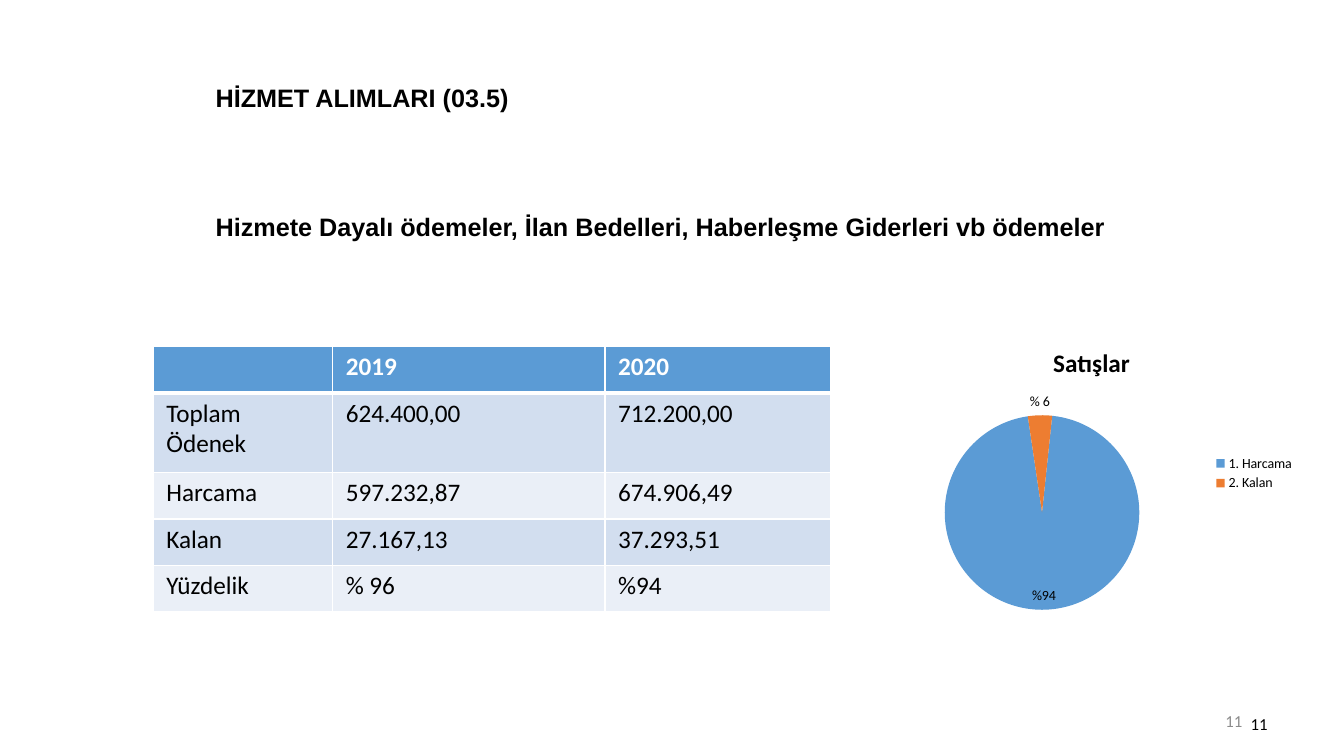
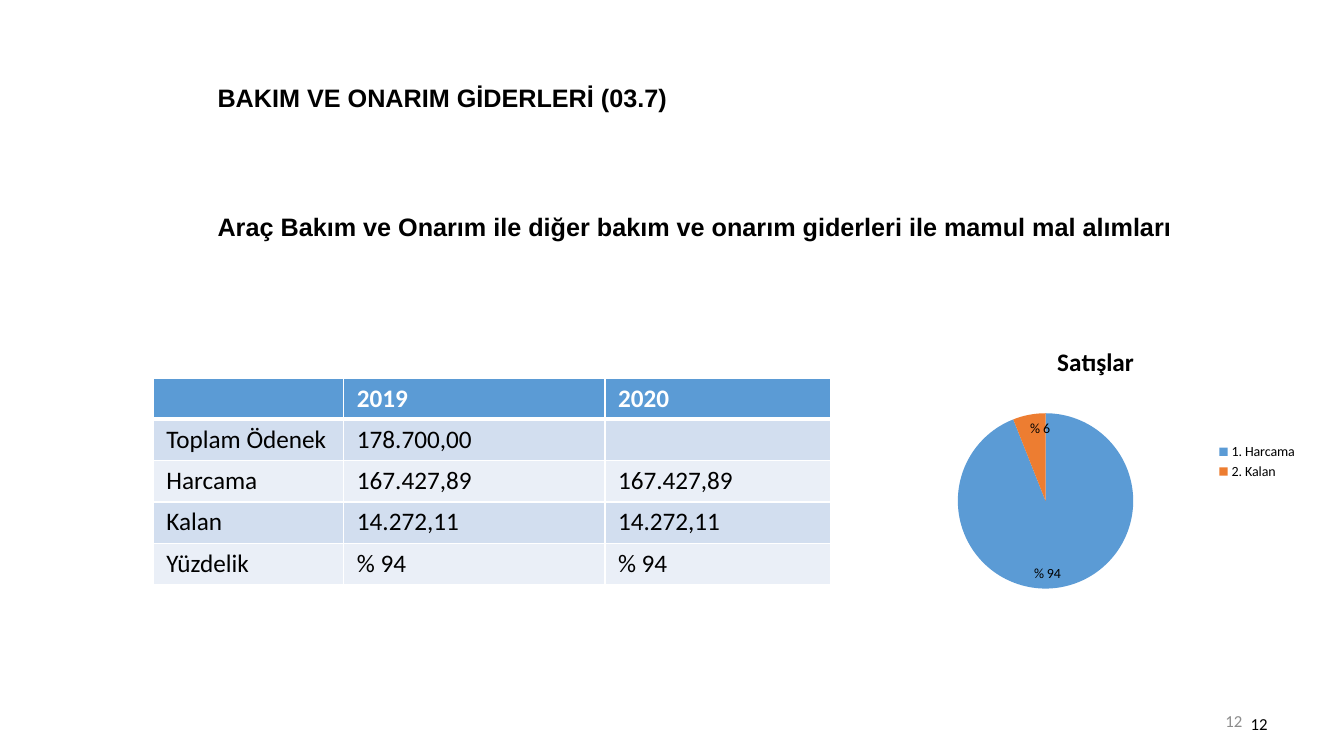
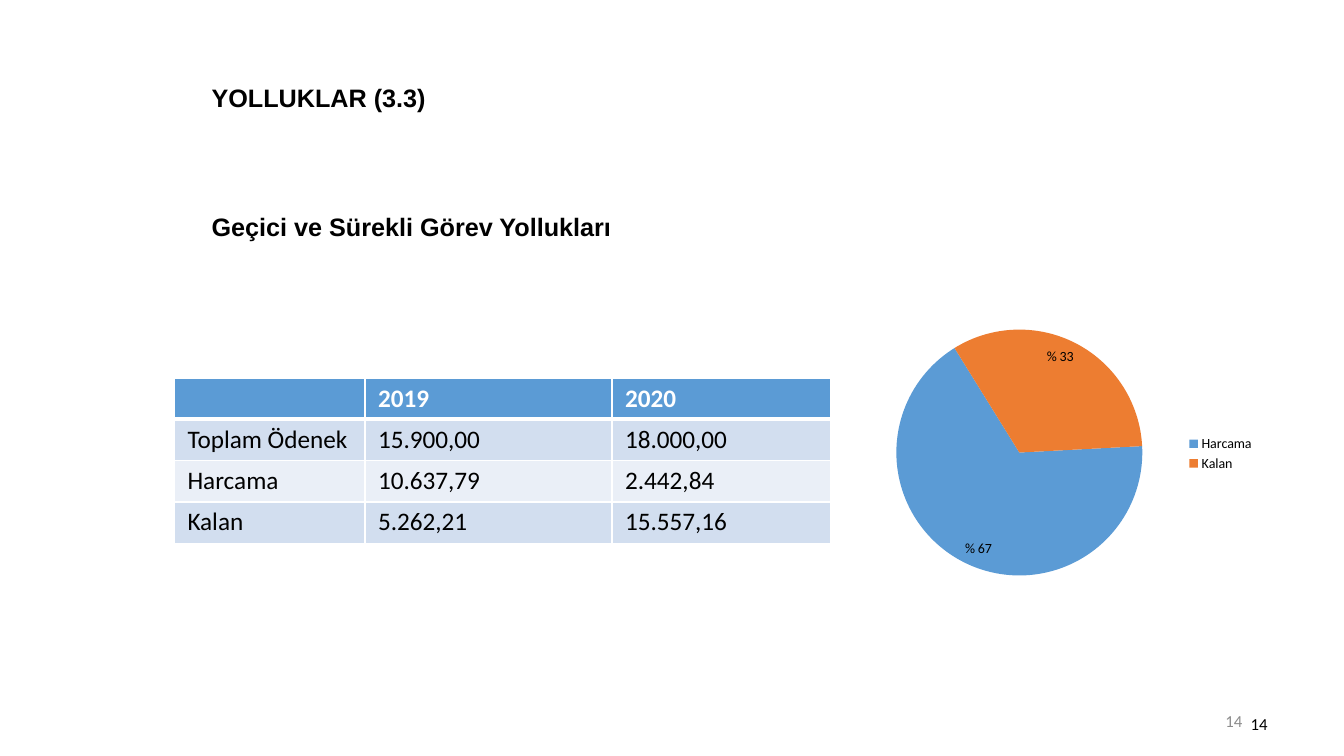
from lxml import etree
from pptx import Presentation
from pptx.chart.data import CategoryChartData
from pptx.dml.color import RGBColor
from pptx.enum.chart import XL_CHART_TYPE, XL_LABEL_POSITION, XL_LEGEND_POSITION
from pptx.enum.text import MSO_ANCHOR, PP_ALIGN
from pptx.oxml import parse_xml
from pptx.oxml.ns import nsdecls, qn
from pptx.util import Inches, Pt

PIE = XL_CHART_TYPE.PIE
INSIDE, OUTSIDE = XL_LABEL_POSITION.INSIDE_END, XL_LABEL_POSITION.OUTSIDE_END
LEGEND_RIGHT = XL_LEGEND_POSITION.RIGHT
TOP, MIDDLE, BOTTOM = MSO_ANCHOR.TOP, MSO_ANCHOR.MIDDLE, MSO_ANCHOR.BOTTOM
LEFT, RIGHT = PP_ALIGN.LEFT, PP_ALIGN.RIGHT

BLACK, WHITE, GREY = "000000", "FFFFFF", "8C8C8C"
BLUE, ORANGE = "5B9BD5", "ED7D31"
BANDS = ("D2DEEF", "EAEFF7")
HEADING_FONT, BODY_FONT = "Arial", "Calibri"


def rgb(value):
    return RGBColor.from_string(value)


def set_font(font, size, color=BLACK, bold=False, name=BODY_FONT):
    font.name = name
    font.size = Pt(size)
    font.bold = bold
    font.color.rgb = rgb(color)


def set_borders(cell, top, bottom):
    """Draw white cell borders; top and bottom are widths in points."""
    tc_pr = cell._tc.get_or_add_tcPr()
    for i, (side, width) in enumerate((("L", 1), ("R", 1), ("T", top), ("B", bottom))):
        tc_pr.insert(i, parse_xml(
            f'<a:ln{side} {nsdecls("a")} w="{Pt(width)}"><a:solidFill>'
            f'<a:srgbClr val="{WHITE}"/></a:solidFill></a:ln{side}>'))


def set_layout(element, index, chart_size, x, y, size=None):
    """Place a chart part by inches from the chart's corner."""
    for old in element.findall(qn("c:layout")):
        element.remove(old)
    width, height = chart_size
    values = {"xMode": "edge", "yMode": "edge", "x": x / width, "y": y / height}
    if size:
        values = {"layoutTarget": "inner", **values,
                  "w": size / width, "h": size / height}
    layout = parse_xml(f'<c:layout {nsdecls("c")}><c:manualLayout/></c:layout>')
    for key, value in values.items():
        etree.SubElement(layout[0], qn(f"c:{key}")).set("val", str(value))
    element.insert(index, layout)


class Deck:
    def __init__(self):
        self.prs = Presentation()
        self.prs.slide_width, self.prs.slide_height = Inches(13.33), Inches(7.5)

    def add_slide(self, number):
        self.s = self.prs.slides.add_slide(self.prs.slide_layouts[6])
        self.text((9.42, 6.95, 3, 0.4), [number], 12, GREY, anchor=MIDDLE, align=RIGHT)
        self.text((9.56, 6.83, 3.11, 0.5), [number], 12, anchor=BOTTOM, align=RIGHT)

    def text(self, box, lines, size, color=BLACK, bold=False, name=BODY_FONT,
             anchor=TOP, align=LEFT, gap=0):
        tf = self.s.shapes.add_textbox(*map(Inches, box)).text_frame
        tf.word_wrap = True
        tf.vertical_anchor = anchor
        for i, line in enumerate(lines):
            p = tf.add_paragraph() if i else tf.paragraphs[0]
            p.text = line
            p.alignment = align
            if i:
                p.space_before = Pt(gap)
            set_font(p.font, size, color, bold, name)

    def heading(self, left, title, subtitle):
        self.text((left, 0.77, 9.97, 1.77), [title, subtitle], 18, bold=True,
                  name=HEADING_FONT, gap=70.5)

    def table(self, left, top, cols, heights, rows):
        frame = self.s.shapes.add_table(
            len(rows), len(cols), Inches(left), Inches(top),
            Inches(sum(cols)), Inches(sum(heights)))
        table = frame.table
        for column, width in zip(table.columns, cols):
            column.width = Inches(width)
        for i, (row, height, values) in enumerate(zip(table.rows, heights, rows)):
            row.height = Inches(height)
            header = i == 0
            for cell, value in zip(row.cells, values):
                cell.margin_left = cell.margin_right = Inches(0.13)
                cell.margin_top = cell.margin_bottom = Inches(0.05)
                cell.fill.solid()
                cell.fill.fore_color.rgb = rgb(BLUE if header else BANDS[(i - 1) % 2])
                set_borders(cell, 3 if i == 1 else 1, 3 if header else 1)
                p = cell.text_frame.paragraphs[0]
                p.text = value
                set_font(p.font, 18, WHITE if header else BLACK, header)

    def pie(self, box, plot, categories, values, labels, name="Satışlar",
            titled=True, start=0, positions=(INSIDE, INSIDE)):
        data = CategoryChartData()
        data.categories = categories
        data.add_series(name, values)
        chart = self.s.shapes.add_chart(PIE, *map(Inches, box), data).chart
        set_font(chart.font, 10)
        chart.has_legend = True
        chart.legend.position = LEGEND_RIGHT
        chart.legend.include_in_layout = False
        chart.has_title = titled
        if titled:
            p = chart.chart_title.text_frame.paragraphs[0]
            p.text = name
            set_font(p.font, 18, bold=True)
            set_layout(chart.chart_title._element, 1, box[2:], 1.75, 0.18)

        pie = chart.plots[0]
        pie.vary_by_categories = True
        slices = zip((BLUE, ORANGE), labels, positions)
        for i, (color, label, position) in enumerate(slices):
            point = pie.series[0].points[i]
            point.format.fill.solid()
            point.format.fill.fore_color.rgb = rgb(color)
            p = point.data_label.text_frame.paragraphs[0]
            p.text = label
            set_font(p.font, 10)
            point.data_label.position = position
        etree.SubElement(pie._element, qn("c:firstSliceAng")).set("val", str(start))
        set_layout(chart._chartSpace.chart.plotArea, 0, box[2:], *plot)


def main():
    deck = Deck()
    header = ("", "2019", "2020")
    numbered = ("1. Harcama", "2. Kalan")

    deck.add_slide("11")
    deck.heading(2.04, "HİZMET ALIMLARI (03.5)",
                 "Hizmete Dayalı ödemeler, İlan Bedelleri, Haberleşme Giderleri vb ödemeler")
    deck.table(1.52, 3.44, (1.78, 2.7, 2.24), (0.46, 0.79, 0.46, 0.46, 0.46), (
        header,
        ("Toplam Ödenek", "624.400,00", "712.200,00"),
        ("Harcama", "597.232,87", "674.906,49"),
        ("Kalan", "27.167,13", "37.293,51"),
        ("Yüzdelik", "% 96", "%94")))
    deck.pie((8.65, 3.2, 4.29, 2.99), (0.72, 0.92, 1.93), numbered, (96, 4),
             ("%94", "% 6"), start=6, positions=(INSIDE, OUTSIDE))

    deck.add_slide("12")
    deck.heading(2.06, "BAKIM VE ONARIM GİDERLERİ (03.7)",
                 "Araç Bakım ve Onarım ile diğer bakım ve onarım giderleri ile mamul mal alımları")
    deck.table(1.52, 3.75, (1.89, 2.59, 2.24), (0.41,) * 5, (
        header,
        ("Toplam Ödenek", "178.700,00", ""),
        ("Harcama", "167.427,89", "167.427,89"),
        ("Kalan", "14.272,11", "14.272,11"),
        ("Yüzdelik", "% 94", "% 94")))
    deck.pie((8.69, 3.19, 4.28, 2.78), (0.81, 0.91, 1.74), numbered, (94, 6),
             ("% 94", "% 6"))

    deck.add_slide("14")
    deck.heading(2, "YOLLUKLAR (3.3)", "Geçici ve Sürekli Görev Yollukları")
    deck.table(1.73, 3.75, (1.89, 2.45, 2.17), (0.41,) * 4, (
        header,
        ("Toplam Ödenek", "15.900,00", "18.000,00"),
        ("Harcama", "10.637,79", "2.442,84"),
        ("Kalan", "5.262,21", "15.557,16")))
    deck.pie((8.49, 3.14, 4.05, 2.72), (0.4, 0.13, 2.44), ("Harcama", "Kalan"), (67, 33),
             ("% 67", "% 33"), name="Series 1", titled=False, start=87)

    deck.prs.save("out.pptx")


if __name__ == "__main__":
    main()
